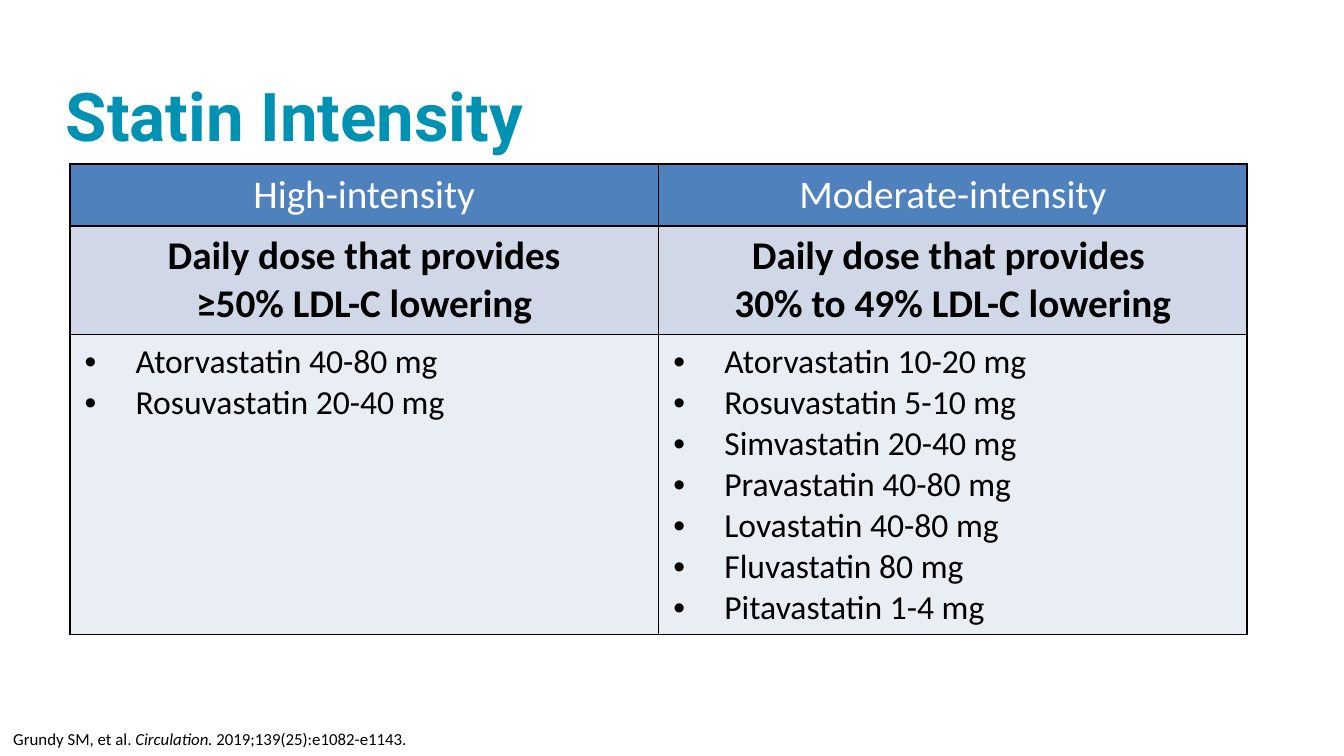
"""Build the statin intensity slide with its dosing table and citation."""

from dataclasses import dataclass

from lxml.etree import SubElement
from pptx import Presentation
from pptx.dml.color import RGBColor
from pptx.enum.text import MSO_ANCHOR as Anchor, MSO_AUTO_SIZE as AutoSize, PP_ALIGN as Align
from pptx.oxml.ns import qn
from pptx.util import Inches, Pt

TEAL = RGBColor(0x00, 0x91, 0xB3)
BLUE = RGBColor(0x4F, 0x81, 0xBD)
PALE_BLUE = RGBColor(0xD0, 0xD8, 0xE8)
MIST = RGBColor(0xE9, 0xED, 0xF4)
WHITE = RGBColor(0xFF, 0xFF, 0xFF)
BLACK = RGBColor(0x00, 0x00, 0x00)


@dataclass(frozen=True)
class TextStyle:
    size: float
    color: RGBColor = BLACK
    bold: bool = False
    face: str = "Calibri"


@dataclass(frozen=True)
class RowStyle:
    height: float
    fill: RGBColor
    text: TextStyle
    anchor: Anchor = Anchor.TOP
    bulleted: bool = False


@dataclass(frozen=True)
class Intensity:
    name: str
    effect: tuple[str, ...]
    doses: tuple[str, ...]


TITLE = TextStyle(36, TEAL, True, "Roboto")
CITATION = TextStyle(9)
ROWS = (
    RowStyle(0.46, BLUE, TextStyle(21, WHITE)),
    RowStyle(0.81, PALE_BLUE, TextStyle(21, bold=True), Anchor.MIDDLE),
    RowStyle(2.23, MIST, TextStyle(18), bulleted=True),
)
INTENSITIES = (
    Intensity(
        "High-intensity",
        ("Daily dose that provides", "≥50% LDL-C lowering"),
        ("Atorvastatin 40-80 mg", "Rosuvastatin 20-40 mg"),
    ),
    Intensity(
        "Moderate-intensity",
        ("Daily dose that provides ", "30% to 49% LDL-C lowering"),
        (
            "Atorvastatin 10-20 mg",
            "Rosuvastatin 5-10 mg",
            "Simvastatin 20-40 mg",
            "Pravastatin 40-80 mg",
            "Lovastatin 40-80 mg",
            "Fluvastatin 80 mg",
            "Pitavastatin 1-4 mg",
        ),
    ),
)
COLUMN_WIDTH = 4.38
SLIDE_WIDTH = 10


def add_run(paragraph, text: str, style: TextStyle, italic: bool = False) -> None:
    run = paragraph.add_run()
    run.text = text
    font = run.font
    font.name, font.size = style.face, Pt(style.size)
    font.bold, font.italic = style.bold, italic
    font.color.rgb = style.color


def add_bullet(paragraph) -> None:
    properties = paragraph._p.get_or_add_pPr()
    indent = Inches(0.38)
    properties.set("marL", str(indent))
    properties.set("indent", str(-indent))
    SubElement(properties, qn("a:buFont"), typeface="Arial")
    SubElement(properties, qn("a:buChar"), char="•")


def add_borders(cell) -> None:
    properties = cell._tc.get_or_add_tcPr()
    for side in ("lnL", "lnR", "lnT", "lnB"):
        line = SubElement(properties, qn(f"a:{side}"), w=str(Pt(1)))
        fill = SubElement(line, qn("a:solidFill"))
        SubElement(fill, qn("a:srgbClr"), val=str(BLACK))


def fill_cell(cell, lines: tuple[str, ...], style: RowStyle) -> None:
    add_borders(cell)
    cell.fill.solid()
    cell.fill.fore_color.rgb = style.fill
    cell.vertical_anchor = style.anchor
    cell.margin_left = cell.margin_right = Inches(0.11)
    cell.margin_top = cell.margin_bottom = Inches(0.05)
    frame = cell.text_frame
    for index, line in enumerate(lines):
        paragraph = frame.add_paragraph() if index else frame.paragraphs[0]
        if style.bulleted:
            add_bullet(paragraph)
        else:
            paragraph.alignment = Align.CENTER
        add_run(paragraph, line, style.text)


def add_title(slide) -> None:
    frame = slide.shapes.add_textbox(Inches(0.49), Inches(0.62), Inches(9), Inches(0.78)).text_frame
    frame.word_wrap = True
    frame.margin_left = frame.margin_right = frame.margin_top = frame.margin_bottom = 0
    heading = frame.paragraphs[0]
    heading.line_spacing = 0.9
    add_run(heading, "Statin Intensity", TITLE)


def add_dose_table(slide) -> None:
    table = slide.shapes.add_table(
        len(ROWS), len(INTENSITIES), Inches(0.52), Inches(1.22),
        Inches(COLUMN_WIDTH * len(INTENSITIES)), Inches(sum(row.height for row in ROWS)),
    ).table
    for row, style in zip(table.rows, ROWS):
        row.height = Inches(style.height)
    for column, intensity in enumerate(INTENSITIES):
        table.columns[column].width = Inches(COLUMN_WIDTH)
        contents = ((intensity.name,), intensity.effect, intensity.doses)
        for row, (lines, style) in enumerate(zip(contents, ROWS)):
            fill_cell(table.cell(row, column), lines, style)


def add_citation(slide) -> None:
    frame = slide.shapes.add_textbox(Inches(0), Inches(5.37), Inches(3.15), Inches(0.25)).text_frame
    frame.word_wrap = False
    frame.auto_size = AutoSize.SHAPE_TO_FIT_TEXT
    reference = frame.paragraphs[0]
    add_run(reference, "Grundy SM, et al. ", CITATION)
    add_run(reference, "Circulation.", CITATION, italic=True)
    add_run(reference, " 2019;139(25):e1082-e1143.", CITATION)


def main() -> None:
    deck = Presentation()
    deck.slide_width = Inches(SLIDE_WIDTH)
    deck.slide_height = Inches(SLIDE_WIDTH * 9 / 16)
    slide = deck.slides.add_slide(deck.slide_layouts[6])
    add_title(slide)
    add_dose_table(slide)
    add_citation(slide)
    deck.save("out.pptx")


if __name__ == "__main__":
    main()
